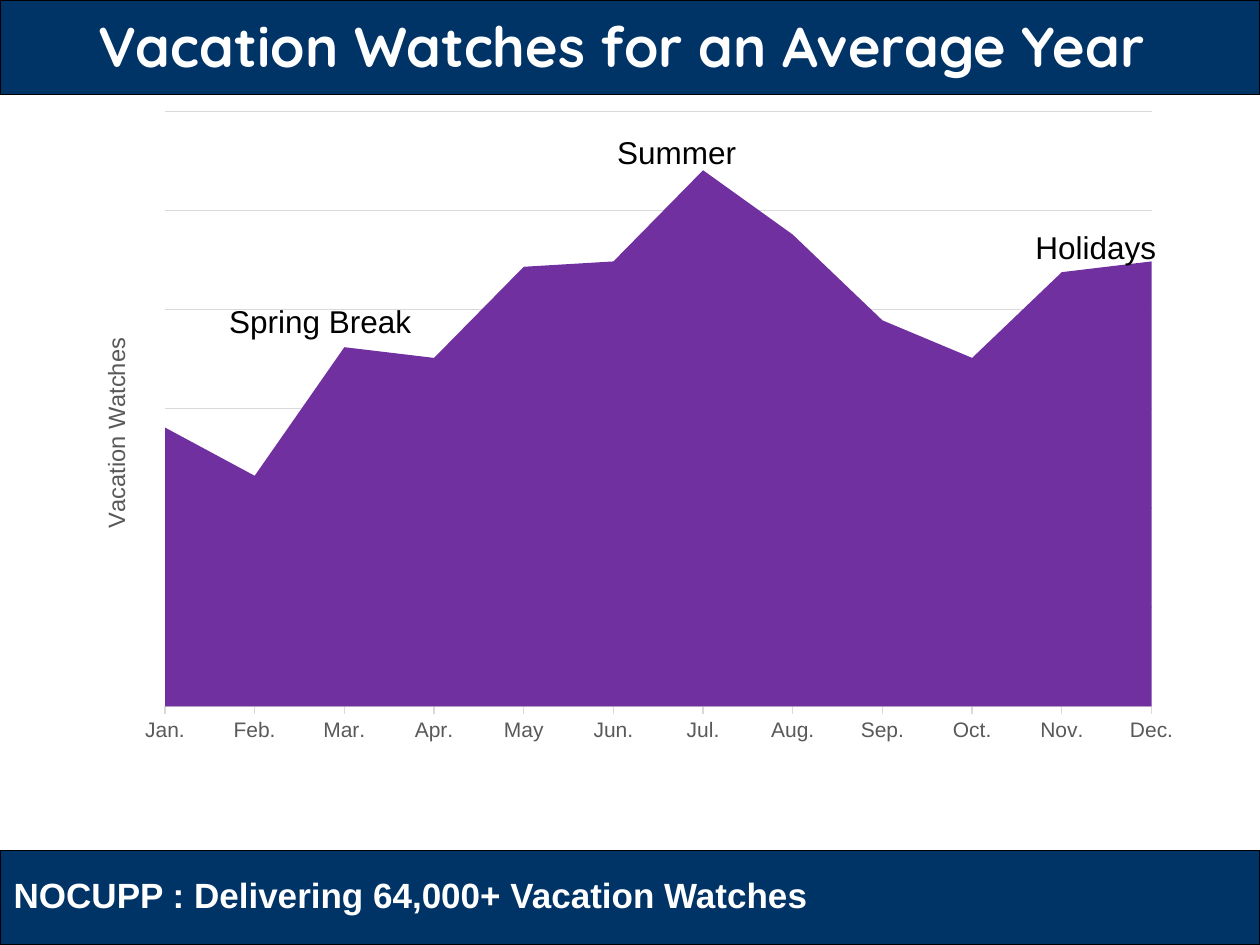
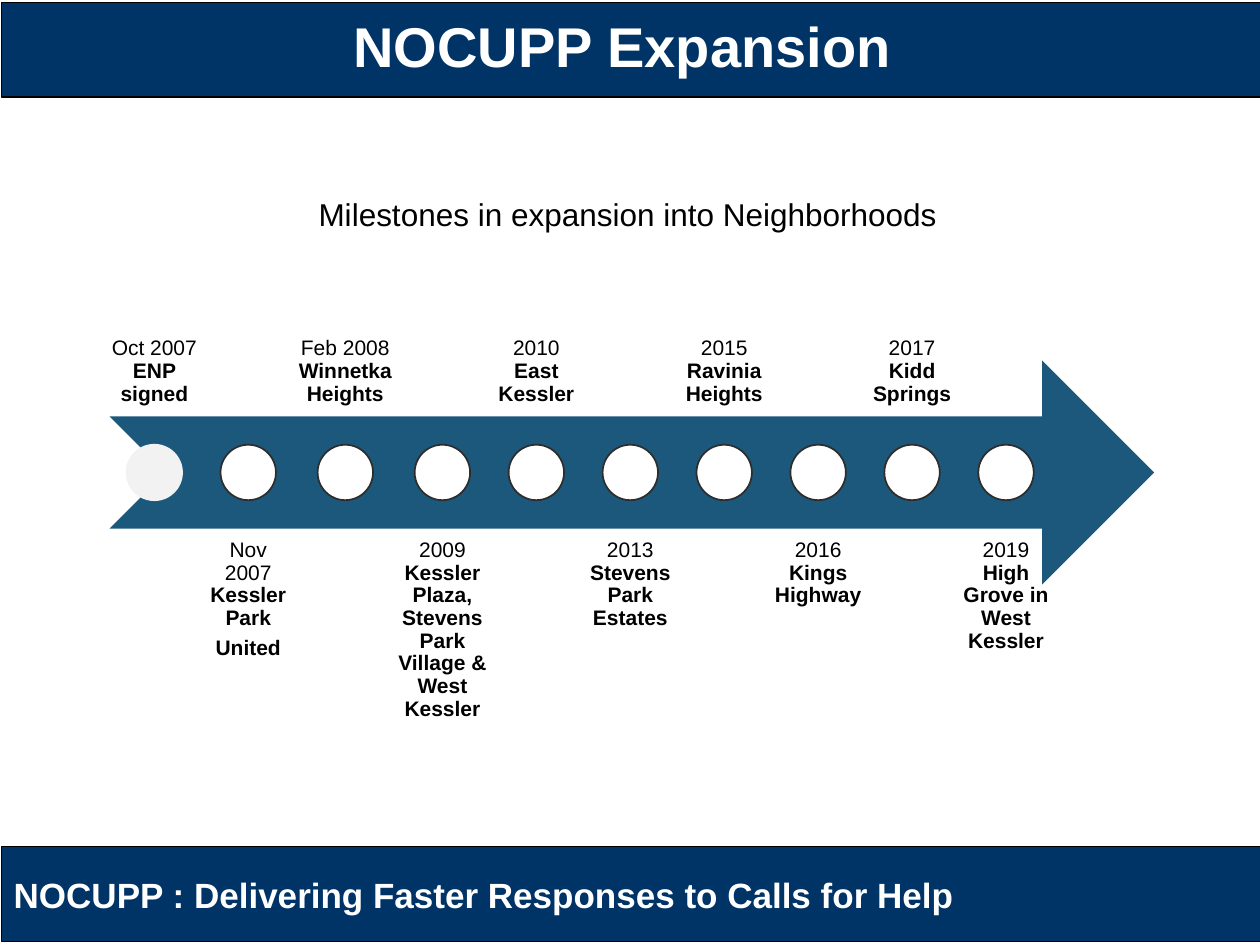
from dataclasses import dataclass

from lxml.etree import SubElement
from pptx import Presentation
from pptx.chart.data import CategoryChartData
from pptx.dml.color import RGBColor
from pptx.enum.chart import XL_CHART_TYPE, XL_TICK_MARK
from pptx.enum.shapes import MSO_SHAPE
from pptx.enum.text import MSO_ANCHOR, MSO_AUTO_SIZE, PP_ALIGN
from pptx.oxml.ns import qn
from pptx.util import Inches, Pt


@dataclass(frozen=True)
class Theme:
    navy: str = "003366"
    teal: str = "1B587C"
    purple: str = "7030A0"
    black: str = "000000"
    white: str = "FFFFFF"
    pale: str = "F2F2F2"
    edge: str = "2D2D2D"
    grid: str = "D9D9D9"
    gray: str = "595959"
    font: str = "Arial"
    title: float = 32
    foot: float = 20
    note: float = 18
    axis: float = 13.5
    small: float = 12


T = Theme()

MONTHS = ("Jan.", "Feb.", "Mar.", "Apr.", "May", "Jun.",
          "Jul.", "Aug.", "Sep.", "Oct.", "Nov.", "Dec.")
WATCHES = (52, 43, 67, 65, 82, 83, 100, 88, 72, 65, 81, 83)

# Date, then the paragraphs of the milestone's name
STEPS = (
    ("Oct 2007 ", ["ENP signed"]),
    ("Nov 2007 ", ["Kessler Park", "United"]),
    ("Feb 2008 ", ["Winnetka Heights"]),
    ("2009 ", ["Kessler Plaza, Stevens Park Village & West Kessler"]),
    ("2010 ", ["East Kessler"]),
    ("2013 ", ["Stevens Park Estates"]),
    ("2015 ", ["Ravinia Heights"]),
    ("2016 ", ["Kings Highway"]),
    ("2017 ", ["Kidd Springs"]),
    ("2019 ", ["High Grove in West Kessler"]),
)


def place(left, top, width, height):
    return [Inches(n) for n in (left, top, width, height)]


def style(font, size, color=T.black, bold=False, name=T.font):
    font.size, font.bold, font.name = Pt(size), bold, name
    font.color.rgb = RGBColor.from_string(color)


def write(para, text, align=None, spacing=None, after=None, **look):
    """Add a formatted run to a paragraph; look is passed to style."""
    run = para.add_run()
    run.text = text
    style(run.font, **look)
    if align is not None:
        para.alignment = align
    if spacing is not None:
        para.line_spacing = spacing
    if after is not None:
        para.space_after = Pt(after)


def shape(slide, kind, box, fill, line=None, width=1):
    item = slide.shapes.add_shape(kind, *place(*box))
    item.shadow.inherit = False
    item.fill.solid()
    item.fill.fore_color.rgb = RGBColor.from_string(fill)
    if line:
        item.line.color.rgb = RGBColor.from_string(line)
        item.line.width = Pt(width)
    else:
        item.line.fill.background()
    return item


def note(slide, text, box, size=T.note, **look):
    """One line of text that does not wrap."""
    frame = slide.shapes.add_textbox(*place(*box)).text_frame
    frame.word_wrap = False
    frame.auto_size = MSO_AUTO_SIZE.SHAPE_TO_FIT_TEXT
    write(frame.paragraphs[0], text, size=size, **look)


def page(deck, title, foot, width, left=0, tops=(0, 6.75), name=T.font):
    """A slide with its two bands, title and footer line."""
    slide = deck.slides.add_slide(deck.slide_layouts[5])
    # Bands go behind the title
    for top in tops:
        band = shape(slide, MSO_SHAPE.RECTANGLE, (left, top, 10, 0.75),
                     T.navy, T.black, 0.75)
        slide.shapes._spTree.insert(2, band._element)
    head = slide.shapes.title
    head.left, head.top, head.width, head.height = place(0.5, 0, 9, 0.78)
    frame = head.text_frame
    frame.auto_size = MSO_AUTO_SIZE.NONE
    frame.vertical_anchor = MSO_ANCHOR.MIDDLE
    write(frame.paragraphs[0], title, align=PP_ALIGN.CENTER, spacing=0.9,
          size=T.title, color=T.white, bold=True, name=name)
    note(slide, foot, (0.01, 6.88, width, 0.44), size=T.foot,
         color=T.white, bold=True)
    return slide


def layout(parent, at, **spots):
    """Fix the place of a chart part, as shares of the chart's size."""
    for old in parent.findall(qn("c:layout")):
        parent.remove(old)
    node = SubElement(parent, qn("c:layout"))
    parent.insert(at, node)
    manual = SubElement(node, qn("c:manualLayout"))
    if "w" in spots:
        SubElement(manual, qn("c:layoutTarget")).set("val", "inner")
    for key in ("xMode", "yMode"):
        SubElement(manual, qn("c:" + key)).set("val", "edge")
    for key, share in spots.items():
        SubElement(manual, qn("c:" + key)).set("val", str(share))


def gray(line):
    line.color.rgb = RGBColor.from_string(T.grid)
    line.width = Pt(0.75)


def area(slide):
    data = CategoryChartData()
    data.categories = MONTHS
    data.add_series("Series 1", WATCHES)
    chart = slide.shapes.add_chart(
        XL_CHART_TYPE.AREA, *place(0.5, 0.78, 9, 5.19), data).chart
    chart.has_legend = chart.has_title = False
    style(chart.font, 10)
    plot = chart.plots[0]
    plot.vary_by_categories = False
    fill = plot.series[0].format.fill
    fill.solid()
    fill.fore_color.rgb = RGBColor.from_string(T.purple)

    # Month axis
    cat = chart.category_axis
    cat.has_major_gridlines = False
    cat.major_tick_mark = XL_TICK_MARK.OUTSIDE
    style(cat.tick_labels.font, T.small, T.gray)
    gray(cat.format.line)

    # Hidden value axis that keeps its title and grid
    val = chart.value_axis
    val.minimum_scale, val.maximum_scale, val.major_unit = 0, 111, 18.5
    val.has_major_gridlines = True
    gray(val.major_gridlines.format.line)
    write(val.axis_title.text_frame.paragraphs[0], "Vacation Watches",
          size=T.axis, color=T.gray)
    val.axis_title.text_frame._txBody.bodyPr.set("rot", "-5400000")
    val.visible = False
    for cross in val._element.findall(qn("c:crossBetween")):
        cross.set("val", "midCat")

    layout(val.axis_title._element, 1, x=0.03, y=0.36)
    layout(chart._chartSpace.chart.plotArea, 0, x=0.09, y=0.02, w=0.87, h=0.91)


def label(slide, left, width, above, date, names):
    frame = slide.shapes.add_textbox(
        *place(left, 1.53 if above else 4.19, width, 1.78)).text_frame
    frame.word_wrap = True
    frame.margin_left = frame.margin_right = 0
    frame.margin_top = frame.margin_bottom = Inches(0.09)
    frame.vertical_anchor = MSO_ANCHOR.BOTTOM if above else MSO_ANCHOR.TOP
    para = frame.paragraphs[0]
    write(para, date, size=T.small)
    for i, name in enumerate(names):
        para = frame.add_paragraph() if i else para
        write(para, name, align=PP_ALIGN.CENTER, spacing=0.9, after=4.2,
              size=T.small, bold=True)


def line(slide):
    """Arrow with dots, and labels in turn above and below it."""
    shape(slide, MSO_SHAPE.NOTCHED_RIGHT_ARROW, (0.87, 2.86, 8.29, 1.78), T.teal)
    left, dot, base = 0.87, 0.44, 0.71
    for i, (date, names) in enumerate(STEPS):
        width = 0.76 if "Winnetka Heights" in names else base
        label(slide, left, width, i % 2 == 0, date, names)
        fill, edge = (T.white, T.edge) if i else (T.pale, T.pale)
        shape(slide, MSO_SHAPE.OVAL,
              (left + (width - dot) / 2, 3.53, dot, dot), fill, edge)
        left += width + base * 0.05


def main():
    deck = Presentation()
    deck.slide_width, deck.slide_height = Inches(10), Inches(7.5)

    # Watches by month
    slide = page(deck, "Vacation Watches for an Average Year ",
                 "NOCUPP : Delivering 64,000+ Vacation Watches", 6.55,
                 name="Quicksand")
    area(slide)
    for text, box in (("Summer", (4.8, 1.01, 1.16, 0.4)),
                      ("Spring Break", (1.72, 2.35, 1.66, 0.4)),
                      ("Holidays", (8.12, 1.76, 1.17, 0.4))):
        note(slide, text, box)

    # Expansion timeline
    slide = page(deck, "NOCUPP Expansion ",
                 "NOCUPP : Delivering Faster Responses to Calls for Help", 7.72,
                 left=0.01, tops=(0.02, 6.72))
    line(slide)
    note(slide, "Milestones in expansion into Neighborhoods",
         (2.43, 1.5, 5.15, 0.4))

    deck.save("out.pptx")


if __name__ == "__main__":
    main()
